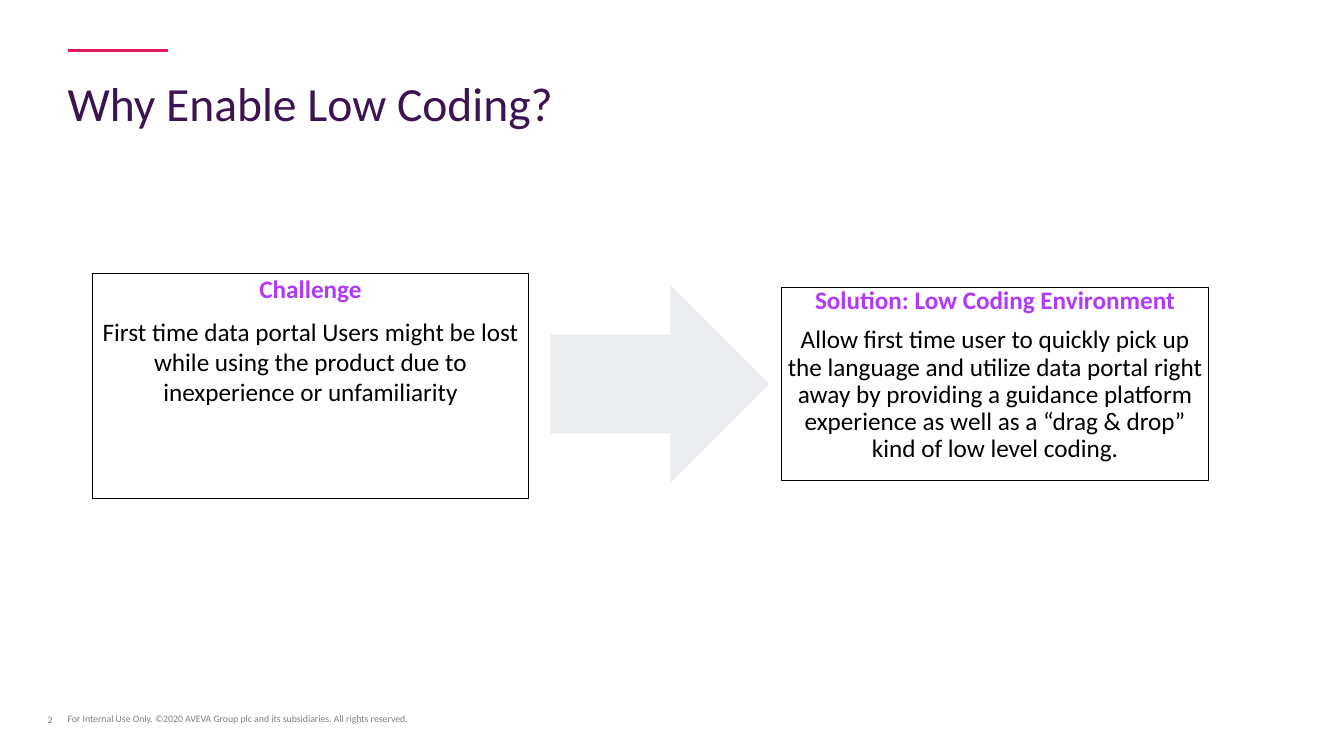
import pptx
import pptx.util
import pptx.dml.color
import pptx.enum.shapes
import pptx.enum.text
import pptx.oxml

Inches = pptx.util.Inches
Pt = pptx.util.Pt
ALIGN = pptx.enum.text.PP_ALIGN
ANCHOR = pptx.enum.text.MSO_ANCHOR
SHAPE = pptx.enum.shapes.MSO_SHAPE
COLORS = {"title": "3C1451", "accent": "E4195B", "heading": "B239FA",
          "body": "000000", "footer": "808080", "arrow": "EAECEF"}


def rgb(name):
    return pptx.dml.color.RGBColor.from_string(COLORS[name])


def write(sp, lines, size, anchor, align, spacing=None, after=None):
    tf = sp.text_frame
    frame = {"word_wrap": True, "vertical_anchor": anchor, "margin_left": 0,
             "margin_top": 0, "margin_right": 0, "margin_bottom": 0}
    for key, value in frame.items():
        setattr(tf, key, value)
    for i, (text, color, bold) in enumerate(lines):
        p = tf.paragraphs[0] if i == 0 else tf.add_paragraph()
        for key, value in {"alignment": align, "line_spacing": spacing, "space_after": after}.items():
            setattr(p, key, value)
        r = p.add_run()
        r.text = text
        for key, value in {"name": "Calibri", "size": Pt(size), "bold": bold}.items():
            setattr(r.font, key, value)
        r.font.color.rgb = rgb(color)


prs = pptx.Presentation()
prs.slide_width = Inches(13.33)
prs.slide_height = Inches(7.5)
s = prs.slides.add_slide(prs.slide_layouts[6])

rule = s.shapes.add_connector(pptx.enum.shapes.MSO_CONNECTOR.STRAIGHT,
                              Inches(0.67), Inches(0.5), Inches(1.67), Inches(0.5))
rule.line.color.rgb = rgb("accent")
rule.line.width = Pt(2)
rule._element.spPr.append(pptx.oxml.parse_xml(
    '<a:effectLst xmlns:a="http://schemas.openxmlformats.org/drawingml/2006/main"/>'))

texts = [
    ((0.67, 0.64, 12, 0.88), "Why Enable Low Coding?", "title", 34, ANCHOR.MIDDLE, ALIGN.LEFT, 0.75),
    ((0.67, 6.84, 7.86, 0.35),
     "For Internal Use Only. ©2020 AVEVA Group plc and its subsidiaries. All rights reserved.",
     "footer", 7, ANCHOR.BOTTOM, ALIGN.LEFT, None),
    ((0.28, 7, 0.24, 0.2), "2", "footer", 7, ANCHOR.BOTTOM, ALIGN.RIGHT, None),
]
for box, text, color, size, anchor, align, spacing in texts:
    sp = s.shapes.add_textbox(*map(Inches, box))
    write(sp, [(text, color, False)], size, anchor, align, spacing)

arrow = s.shapes.add_shape(SHAPE.RIGHT_ARROW, Inches(5.46), Inches(2.83), Inches(2.17), Inches(1.96))
arrow.shadow.inherit = False
arrow.fill.solid()
arrow.fill.fore_color.rgb = rgb("arrow")
arrow.line.fill.background()

cards = [
    ((0.92, 2.71, 4.32, 2.24), None, "Challenge",
     "First time data portal Users might be lost while using the product due to "
     "inexperience or unfamiliarity"),
    ((7.75, 2.85, 4.24, 1.92), 0.9, "Solution: Low Coding Environment",
     "Allow first time user to quickly pick up the language and utilize data portal right away "
     "by providing a guidance platform experience as well as a “drag & drop” kind of low level coding."),
]
for box, spacing, heading, body in cards:
    sp = s.shapes.add_shape(SHAPE.RECTANGLE, *map(Inches, box))
    sp.shadow.inherit = False
    sp.fill.background()
    sp.line.color.rgb = rgb("body")
    sp.line.width = Pt(0.75)
    write(sp, [(heading, "heading", True), (body, "body", False)],
          18, ANCHOR.TOP, ALIGN.CENTER, spacing, Pt(9))

prs.save("out.pptx")
